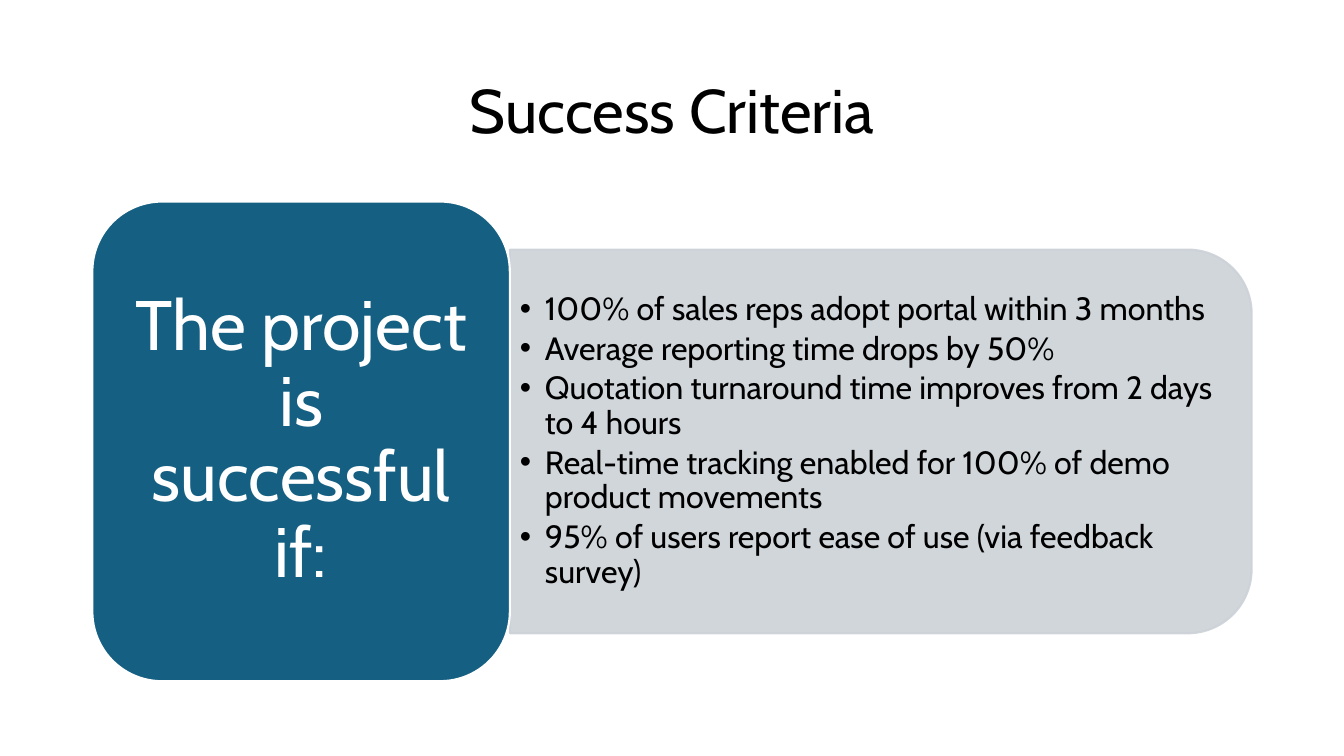
import dataclasses

import pptx
import pptx.dml.color
import pptx.enum.shapes
import pptx.enum.text
import pptx.oxml
import pptx.oxml.ns
import pptx.oxml.xmlchemy
import pptx.util

COLUMNS, ROWS = 160, 90
SHAPES = pptx.enum.shapes.MSO_SHAPE
CENTER = pptx.enum.text.PP_ALIGN.CENTER
LEFT = pptx.enum.text.PP_ALIGN.LEFT

CRITERIA = [
    "100% of sales reps adopt portal within 3 months",
    "Average reporting time drops by 50%",
    "Quotation turnaround time improves from 2 days to 4 hours",
    "Real-time tracking enabled for 100% of demo product movements",
    "95% of users report ease of use (via feedback survey)",
]


@dataclasses.dataclass(frozen=True)
class Theme:
    font: str = "Cabin"
    ink: str = "000000"
    paper: str = "FFFFFF"
    card: str = "156082"
    panel: str = "CCD2D8"
    panel_opacity: int = 90
    title_size: int = 44
    card_size: int = 50
    bullet_size: int = 23
    line_width: float = 1.5
    line_spacing: float = 0.9


def color(value):
    return pptx.dml.color.RGBColor.from_string(value)


def apply(target, values):
    for name, value in values.items():
        setattr(target, name, value)


def add_element(parent, tag, **attributes):
    element = pptx.oxml.xmlchemy.OxmlElement(tag)
    for name, value in attributes.items():
        element.set(name, str(value))
    parent.append(element)


class SlideBuilder:
    def __init__(self, presentation, theme):
        self.theme = theme
        self.slide = presentation.slides.add_slide(presentation.slide_layouts[6])
        self.column = presentation.slide_width / COLUMNS
        self.row = presentation.slide_height / ROWS

    def box(self, left, top, width, height):
        return [
            round(left * self.column), round(top * self.row),
            round(width * self.column), round(height * self.row),
        ]

    def shape(self, kind, area, fill, line, opacity=100, quarter_turn=False):
        left, top, width, height = self.box(*area)
        if quarter_turn:
            shift = (width - height) // 2
            left, top, width, height = left + shift, top - shift, height, width
        shape = self.slide.shapes.add_shape(kind, left, top, width, height)
        shape.rotation = 90 if quarter_turn else 0
        shape.shadow.inherit = False
        shape.line.width = pptx.util.Pt(self.theme.line_width)
        for paint, value in ((shape.fill, fill), (shape.line.fill, line)):
            paint.solid()
            paint.fore_color.rgb = color(value)
        if opacity < 100:
            for element in shape.element.spPr.iter(pptx.oxml.ns.qn("a:srgbClr")):
                add_element(element, "a:alpha", val=opacity * 1000)

    def text(self, area, lines, size, ink, align=CENTER, insets=(0.1, 0.05),
             space_after=0, bullets=False):
        frame = self.slide.shapes.add_textbox(*self.box(*area)).text_frame
        horizontal, vertical = map(pptx.util.Inches, insets)
        apply(frame, {
            "word_wrap": True,
            "vertical_anchor": pptx.enum.text.MSO_ANCHOR.MIDDLE,
            "margin_left": horizontal, "margin_right": horizontal,
            "margin_top": vertical, "margin_bottom": vertical,
        })
        for index, line in enumerate(lines):
            paragraph = frame.add_paragraph() if index else frame.paragraphs[0]
            paragraph.text = line
            apply(paragraph, {
                "alignment": align,
                "line_spacing": self.theme.line_spacing,
                "space_after": pptx.util.Pt(space_after),
            })
            if bullets:
                self.bullet(paragraph)
            apply(paragraph.runs[0].font,
                  {"name": self.theme.font, "size": pptx.util.Pt(size)})
            paragraph.runs[0].font.color.rgb = color(ink)

    def bullet(self, paragraph):
        properties = paragraph._p.get_or_add_pPr()
        indent = pptx.util.Inches(0.25)
        properties.set("marL", str(indent))
        properties.set("indent", str(-indent))
        add_element(properties, "a:buFont", typeface="Arial")
        add_element(properties, "a:buChar", char="•")


def main():
    theme = Theme()
    presentation = pptx.Presentation()
    presentation.slide_width = pptx.util.Inches(13.333)
    presentation.slide_height = pptx.util.Inches(7.5)
    builder = SlideBuilder(presentation, theme)

    margin, content_width = 11, COLUMNS - 22
    card_top, card_width, card_height = 24, 49.7, 57.1
    card_inset, panel_inset = 2.4, 2.2
    panel_left, panel_width = margin + card_width, content_width - card_width
    panel_height = card_height * 0.8
    panel_top = card_top + (card_height - panel_height) / 2

    builder.text((margin, 4.8, content_width, 17.4), ["Success Criteria"],
                 theme.title_size, theme.ink)
    builder.shape(SHAPES.ROUND_2_SAME_RECTANGLE,
                  (panel_left, panel_top, panel_width, panel_height),
                  theme.panel, theme.panel, theme.panel_opacity, quarter_turn=True)
    builder.text((panel_left, panel_top + panel_inset,
                  panel_width - panel_inset, panel_height - 2 * panel_inset),
                 CRITERIA, theme.bullet_size, theme.ink, LEFT,
                 space_after=theme.bullet_size * 0.15, bullets=True)
    builder.shape(SHAPES.ROUNDED_RECTANGLE,
                  (margin, card_top, card_width, card_height),
                  theme.card, theme.paper)
    builder.text((margin + card_inset, card_top + card_inset,
                  card_width - 2 * card_inset, card_height - 2 * card_inset),
                 ["The project is successful if:"], theme.card_size, theme.paper,
                 insets=(0.21, 0.1))
    presentation.save("out.pptx")


if __name__ == "__main__":
    main()
